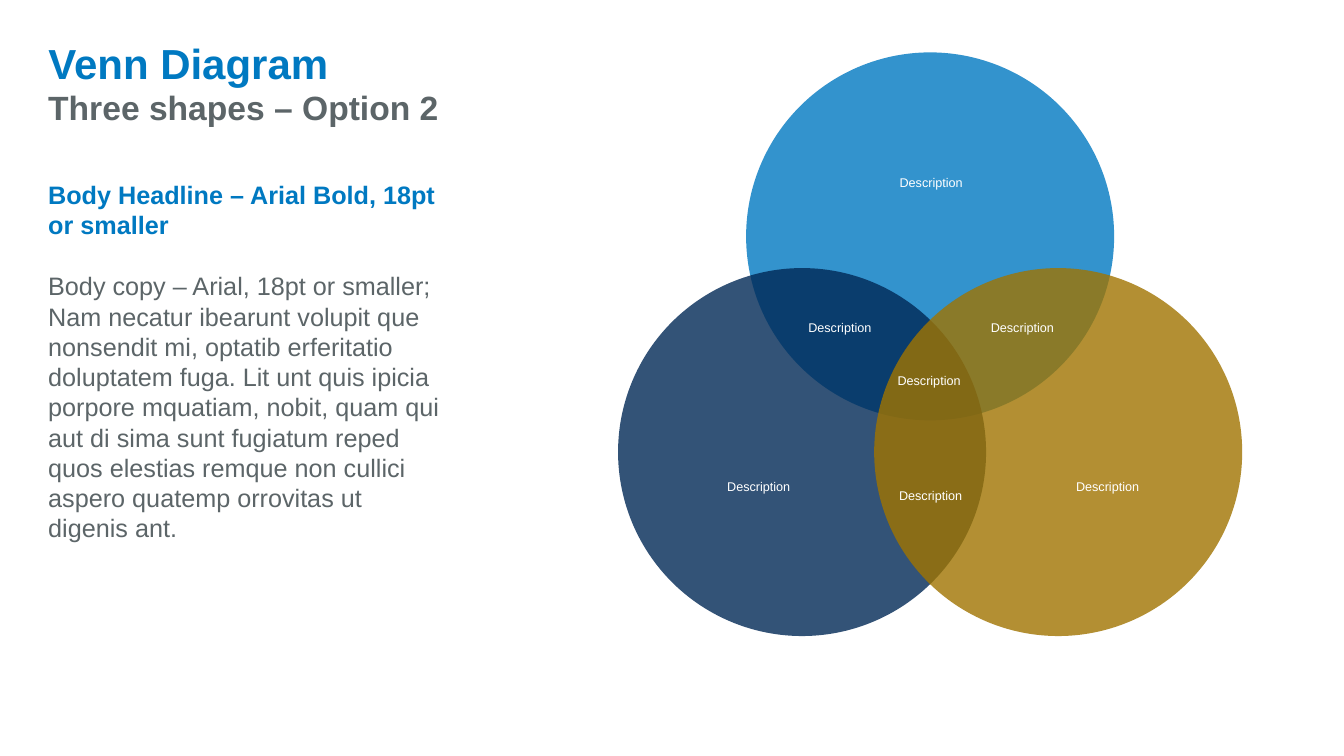
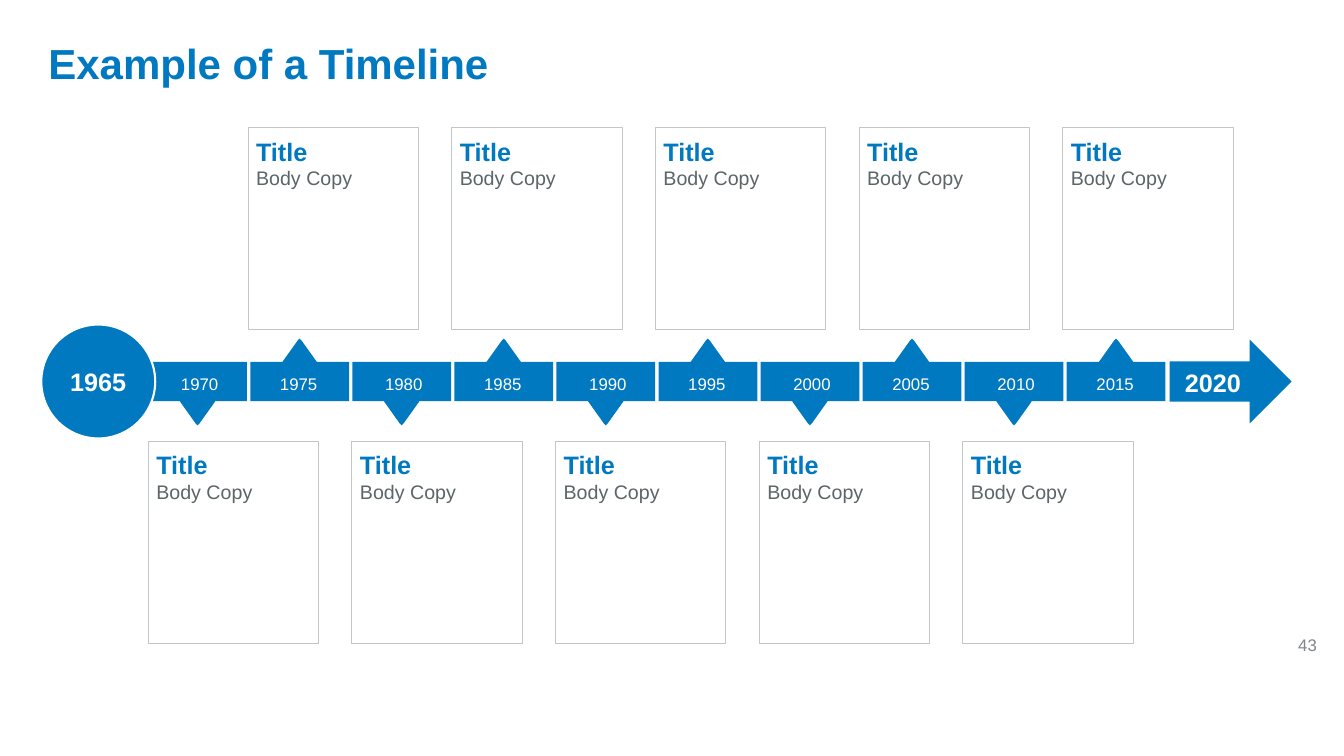
from dataclasses import dataclass

from lxml import etree
from pptx import Presentation
from pptx import util as u
from pptx.dml import color
from pptx.enum import shapes, text
from pptx.oxml import ns


@dataclass(frozen=True)
class Theme:
    """Colours, font and type sizes shared by the slides."""
    font: str = "Arial"
    blue: str = "0079C1"
    navy: str = "002855"
    gold: str = "A07400"
    gray: str = "5C6568"
    page_gray: str = "7C878E"
    rule: str = "C1C6C8"
    white: str = "FFFFFF"
    title: int = 30
    subtitle: int = 24
    heading: int = 18
    body: int = 14
    small: int = 12
    caption: int = 9


THEME = Theme()
LEFT, CENTER, RIGHT = text.PP_ALIGN.LEFT, text.PP_ALIGN.CENTER, text.PP_ALIGN.RIGHT
TOP, MIDDLE = text.MSO_ANCHOR.TOP, text.MSO_ANCHOR.MIDDLE
SHAPE = shapes.MSO_SHAPE


class SlideBuilder:
    """Draws styled elements on the current slide."""

    def __init__(self, deck, theme):
        """Keep the deck and its theme."""
        self.deck = deck
        self.theme = theme
        self.page = None

    def start(self, title):
        """Add a slide with a formatted title."""
        self.page = self.deck.slides.add_slide(self.deck.slide_layouts[5])
        box = self.page.shapes.title
        place = zip(("left", "top", "width", "height"), (0.38, 0.27, 12.95, 0.7))
        for name, value in place:
            setattr(box, name, u.Inches(value))
        self.fill_text(box, [(title, self.theme.title, self.theme.blue, True)], anchor=MIDDLE)

    def fill_text(self, box, lines, align=LEFT, anchor=TOP, inset=(0.1, 0.05), wrap=True,
                  **spacing):
        """Fill a shape with (words, size, colour, bold) paragraphs."""
        frame = box.text_frame
        across, down = (u.Inches(value) for value in inset)
        settings = {"word_wrap": wrap, "auto_size": text.MSO_AUTO_SIZE.NONE,
                    "vertical_anchor": anchor, "margin_left": across,
                    "margin_right": across, "margin_top": down, "margin_bottom": down}
        for name, value in settings.items():
            setattr(frame, name, value)
        for index, (words, size, tint, bold) in enumerate(lines):
            para = frame.add_paragraph() if index else frame.paragraphs[0]
            para.alignment = align
            for name, value in spacing.items():
                if index or name != "space_before":
                    setattr(para, name, value)
            span = para.add_run()
            span.text = words
            style = {"name": self.theme.font, "size": u.Pt(size), "bold": bold}
            for name, value in style.items():
                setattr(span.font, name, value)
            span.font.color.rgb = color.RGBColor.from_string(tint)

    def text_box(self, place, lines, **layout):
        """Add a text box."""
        box = self.page.shapes.add_textbox(*map(u.Inches, place))
        self.fill_text(box, lines, **layout)

    def label(self, place, words, size, bold=False, **layout):
        """Add a centred white label."""
        self.text_box(place, [(words, size, self.theme.white, bold)],
                      align=CENTER, anchor=MIDDLE, **layout)

    def paint(self, shape, fill, opacity=100, line=None, weight=0.75):
        """Set fill, opacity and outline."""
        shape.shadow.inherit = False
        shape.fill.solid()
        shape.fill.fore_color.rgb = color.RGBColor.from_string(fill)
        if opacity < 100:
            tint = shape.element.spPr.find(ns.qn("a:solidFill")).find(ns.qn("a:srgbClr"))
            etree.SubElement(tint, ns.qn("a:alpha"), val=str(opacity * 1000))
        if line:
            shape.line.color.rgb = color.RGBColor.from_string(line)
            shape.line.width = u.Pt(weight)
        else:
            shape.line.fill.background()

    def preset(self, kind, place, fill, **look):
        """Add a preset shape."""
        shape = self.page.shapes.add_shape(kind, *map(u.Inches, place))
        self.paint(shape, fill, **look)
        return shape

    def pointer(self, center, base, direction):
        """Add a rounded pointer, down for 1 and up for -1."""
        half = [(0.15, 0), (0.17, 0.01), (0.18, 0.02), (0.17, 0.04),
                (0.02, 0.25), (0.01, 0.26), (0, 0.27)]
        outline = half + [(-x, y) for x, y in reversed(half[:-1])]
        points = [(u.Inches(center + x), u.Inches(base + direction * y)) for x, y in outline]
        builder = self.page.shapes.build_freeform(*points[0])
        builder.add_line_segments(points[1:], close=True)
        self.paint(builder.convert_to_shape(), self.theme.blue)

    def card(self, left, top):
        """Add an outlined card with a title and body copy."""
        box = self.preset(SHAPE.RECTANGLE, (left, top, 1.69, 2), self.theme.white,
                          opacity=50, line=self.theme.rule)
        self.fill_text(box, [("Title", self.theme.heading, self.theme.blue, True),
                             ("Body Copy", self.theme.body, self.theme.gray, False)],
                       inset=(0.08, 0.08))


def venn_slide(draw):
    """Build the three-circle Venn diagram."""
    theme = draw.theme
    draw.start("Venn Diagram")
    draw.text_box((0.38, 0.82, 12.95, 0.49),
                  [("Three shapes – Option 2", theme.subtitle, theme.gray, True)],
                  anchor=MIDDLE)
    circles = [(7.4, 0.52, theme.blue), (6.13, 2.66, theme.navy), (8.67, 2.66, theme.gold)]
    for left, top, fill in circles:
        draw.preset(SHAPE.OVAL, (left, top, 3.65, 3.65), fill, opacity=80)
    body = ("Body copy – Arial, 18pt or smaller; Nam necatur ibearunt volupit que nonsendit "
            "mi, optatib erferitatio doluptatem fuga. Lit unt quis ipicia porpore mquatiam, "
            "nobit, quam qui aut di sima sunt fugiatum reped quos elestias remque non cullici "
            "aspero quatemp orrovitas ut digenis ant.")
    draw.text_box((0.38, 1.73, 4.1, 4.71),
                  [("Body Headline – Arial Bold, 18pt or smaller",
                    theme.heading, theme.blue, True),
                   (body, theme.heading, theme.gray, False)],
                  space_before=u.Pt(10), space_after=u.Pt(12), line_spacing=u.Pt(21.6))
    places = [(6.72, 3.99, 1.61, 1.68), (10.18, 3.99, 1.61, 1.68), (8.43, 0.97, 1.61, 1.68),
              (7.66, 2.88, 1.34, 0.73), (9.47, 2.88, 1.34, 0.73),
              (8.68, 4.32, 1.1, 1.2), (8.78, 3.37, 0.87, 0.81)]
    for place in places:
        draw.label(place, "Description", theme.caption)


def timeline_slide(draw):
    """Build the timeline with alternating cards."""
    theme = draw.theme
    draw.start("Example of a Timeline")
    arrow = draw.preset(SHAPE.RIGHT_ARROW, (11.6, 3.37, 1.21, 0.83), theme.blue)
    arrow.adjustments[0] = 0.48
    draw.label((11.65, 3.59, 0.76, 0.4), "2020", theme.heading, bold=True, wrap=False)
    draw.text_box((11.66, 6.2, 1.5, 0.4), [("43", theme.small, theme.page_gray, False)],
                  align=RIGHT, anchor=MIDDLE)
    first, last, count, width = 1.47, 10.58, 10, 0.98
    pitch = (last - first) / (count - 1)
    for index in range(count):
        left = first + index * pitch
        base, direction, nudge = (3.63, -1, -0.01) if index % 2 else (3.95, 1, 0.02)
        draw.preset(SHAPE.RECTANGLE, (left, 3.59, width, 0.39), theme.blue)
        draw.pointer(left + width / 2, base, direction)
        draw.label((left + nudge, 3.62, width, 0.37), str(1970 + 5 * index), theme.small,
                   inset=(0, 0), wrap=False)
    for row_left, row_top in [(1.47, 4.38), (2.46, 1.27)]:
        for column in range(count // 2):
            draw.card(row_left + 2.02 * column, row_top)
    origin = draw.preset(SHAPE.OVAL, (0.41, 3.22, 1.13, 1.13), theme.blue,
                         line=theme.white, weight=1.5)
    draw.fill_text(origin, [("1965", theme.heading, theme.white, True)],
                   align=CENTER, anchor=MIDDLE, inset=(0.04, 0.04))


def main():
    """Build and save the deck."""
    deck = Presentation()
    deck.slide_width, deck.slide_height = u.Inches(13.33), u.Inches(7.5)
    draw = SlideBuilder(deck, THEME)
    venn_slide(draw)
    timeline_slide(draw)
    deck.save("out.pptx")


if __name__ == "__main__":
    main()
